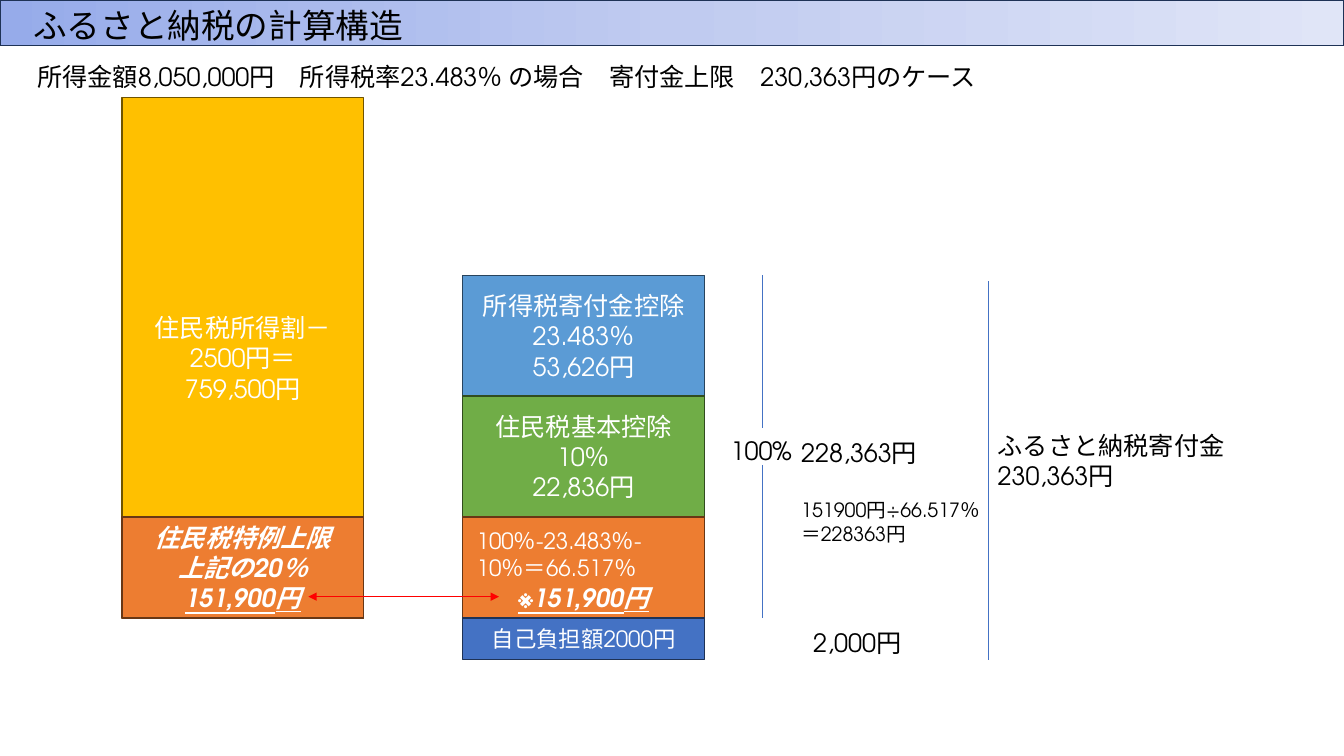
from copy import deepcopy

from lxml.etree import SubElement
from pptx import Presentation
from pptx.dml.color import RGBColor as RGB
from pptx.enum.shapes import MSO_CONNECTOR as CONN, MSO_SHAPE as SHAPE
from pptx.enum.text import MSO_ANCHOR as ANCHOR, MSO_AUTO_SIZE as FIT, PP_ALIGN as ALIGN
from pptx.oxml.ns import qn
from pptx.util import Pt

COLORS = {
    "black": "000000", "white": "FFFFFF", "red": "FF0000",
    "gold": "FFC000", "gold_edge": "705400",
    "orange": "ED7D31", "orange_edge": "683715",
    "green": "70AD47", "green_edge": "314C1F",
    "sky": "5B9BD5", "sky_edge": "28445D",
    "blue": "4472C4", "blue_edge": "1E3256",
    "banner_0": "96ABEA", "banner_50": "C0CBF0", "banner_100": "E0E5F7",
}


def rgb(name):
    return RGB.from_string(COLORS[name])


class Deck:
    font = "TeX Gyre Adventor"
    title_font = "Noto Sans CJK JP"

    def __init__(self, width, height):
        self.prs = Presentation()
        self.prs.slide_width, self.prs.slide_height = Pt(width), Pt(height)
        self.s = self.prs.slides.add_slide(self.prs.slide_layouts[5])

    def fill_text(self, tf, lines, size, color, align=ALIGN.LEFT, font=None, strong=False):
        tf.word_wrap = True
        tf.auto_size = FIT.NONE
        for i, line in enumerate(lines):
            p = tf.paragraphs[0] if i == 0 else tf.add_paragraph()
            p.text = line
            p.alignment = align
            p.font.name = font or self.font
            p.font.size = Pt(size)
            p.font.color.rgb = rgb(color)
            p.font.bold = p.font.italic = strong
        if strong:
            p.font.underline = True

    def rect(self, x, y, w, h, edge):
        sp = self.s.shapes.add_shape(SHAPE.RECTANGLE, Pt(x), Pt(y), Pt(w), Pt(h))
        sp.shadow.inherit = False
        sp.line.color.rgb = rgb(edge)
        sp.line.width = Pt(1)
        return sp

    def title(self, text, x, y, w, h):
        sp = self.s.shapes.title
        sp.left, sp.top, sp.width, sp.height = Pt(x), Pt(y), Pt(w), Pt(h)
        sp.text_frame.vertical_anchor = ANCHOR.TOP
        self.fill_text(sp.text_frame, [text], 24, "black", font=self.title_font)

    def banner(self, w, h):
        sp = self.rect(0, 0, w, h, "blue_edge")
        sp.fill.gradient()
        sp.fill.gradient_angle = 0
        stops = sp._element.find(".//" + qn("a:gsLst"))
        stops.append(deepcopy(stops[0]))
        for stop, percent in zip(sp.fill.gradient_stops, (0, 50, 100)):
            stop.position = percent / 100
            stop.color.rgb = rgb(f"banner_{percent}")
        self.s.shapes.title._element.addprevious(sp._element)

    def block(self, x, y, w, h, color, lines, size=18, anchor=ANCHOR.MIDDLE, strong=False):
        sp = self.rect(x, y, w, h, color + "_edge")
        sp.fill.solid()
        sp.fill.fore_color.rgb = rgb(color)
        sp.text_frame.vertical_anchor = anchor
        self.fill_text(sp.text_frame, lines, size, "white", ALIGN.CENTER, strong=strong)

    def text(self, x, y, w, h, lines, size=18, color="black"):
        tf = self.s.shapes.add_textbox(Pt(x), Pt(y), Pt(w), Pt(h)).text_frame
        self.fill_text(tf, lines, size, color)
        return tf

    def line(self, x1, y1, x2, y2, color="blue", arrows=False):
        c = self.s.shapes.add_connector(CONN.STRAIGHT, Pt(x1), Pt(y1), Pt(x2), Pt(y2))
        c.line.color.rgb = rgb(color)
        c.line.width = Pt(0.5)
        if arrows:
            ln = c._element.spPr.find(qn("a:ln"))
            for tag in ("a:headEnd", "a:tailEnd"):
                SubElement(ln, qn(tag), type="triangle")
        SubElement(c._element.spPr, qn("a:effectLst"))


def main():
    d = Deck(960, 540)
    d.title("ふるさと納税の計算構造", 16.6, 0, 360, 36)
    d.banner(960, 32.4)
    d.text(19.4, 40.3, 839, 29, [
        "所得金額8,050,000円　所得税率23.483％ の場合　寄付金上限　230,363円のケース"])

    bar_w, tax_x, gift_x = 172.8, 87.1, 330.5
    tax_top, gift_top, special_h = 69.8, 196.6, 72
    gift_parts = [
        (86.4, "sky", ["所得税寄付金控除", "23.483％", "53,626円"], {}),
        (86.4, "green", ["住民税基本控除10％", "22,836円"], {}),
        (special_h, "orange", ["※151,900円"], {"anchor": ANCHOR.BOTTOM, "strong": True}),
        (29.5, "blue", ["自己負担額2000円"], {"size": 16}),
    ]
    special_end = gift_top + sum(part[0] for part in gift_parts[:3])
    special_top = special_end - special_h

    d.block(tax_x, tax_top, bar_w, special_end - tax_top, "gold",
            ["住民税所得割－2500円＝", "759,500円"])
    d.block(tax_x, special_top, bar_w, special_h, "orange",
            ["住民税特例上限", "上記の20％", "151,900円"], strong=True)
    y = gift_top
    for h, color, lines, style in gift_parts:
        d.block(gift_x, y, bar_w, h, color, lines, **style)
        y += h
    d.text(333.4, 373, 159, 46, ["100％-23.483％-10％＝66.517％"], 16, "white")
    d.line(220.3, 426.2, 356.4, 426.2, "red", arrows=True)

    for y1, y2 in ((gift_top, 306), (332, special_end)):
        d.line(544.3, y1, 544.3, y2)
    d.line(706.3, 200.9, 706.3, 471.6)

    d.text(514.8, 307.4, 150.5, 51, ["100%"])
    tf = d.text(565.2, 308.9, 150.5, 106.6, ["228,363円", "151900円÷66.517％", "＝228363円"])
    for p in tf.paragraphs[1:]:
        p.font.size = Pt(14)
    tf.paragraphs[1].space_before = Pt(21.6)
    d.text(573.8, 444.2, 150.5, 29, ["2,000円"])
    d.text(705.6, 303.8, 187.2, 72.7, ["ふるさと納税寄付金", "230,363円"])

    d.prs.save("out.pptx")


if __name__ == "__main__":
    main()
